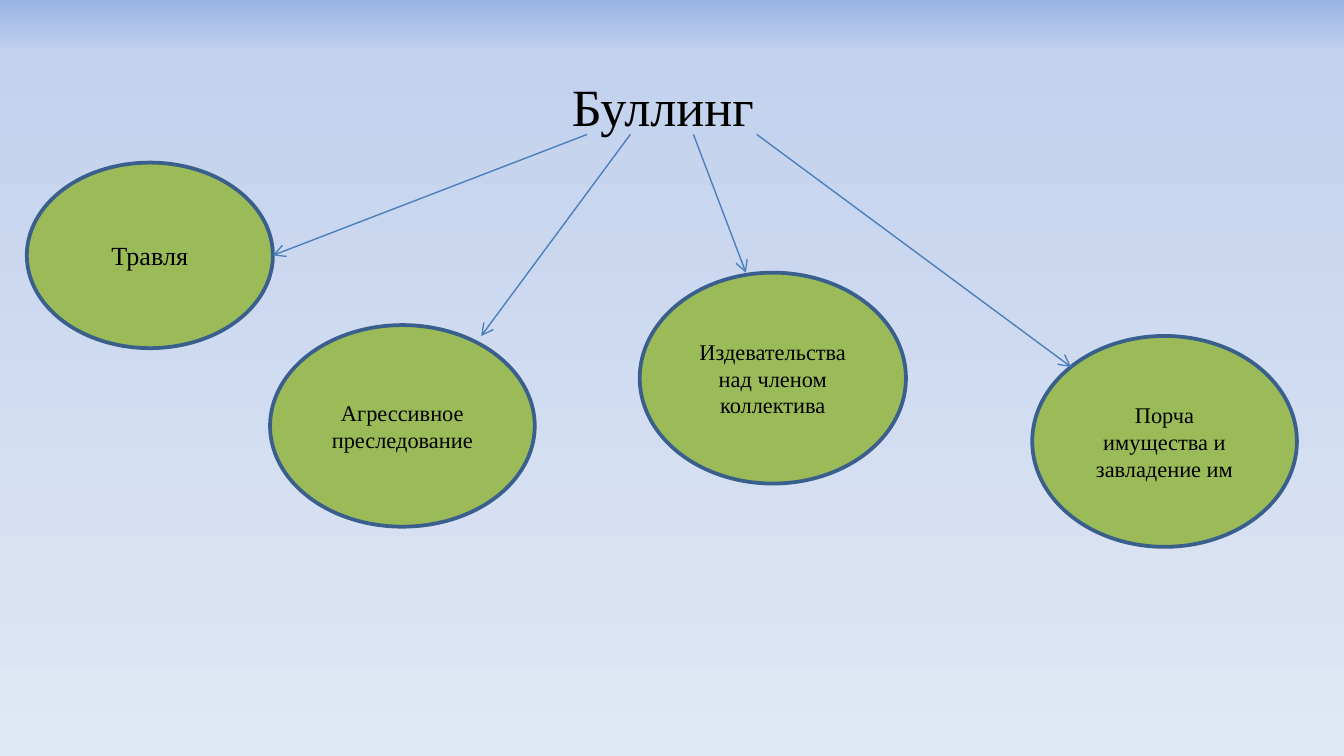
"""Builds a slide that links bullying to its four forms."""
from dataclasses import dataclass

from pptx import Presentation
from pptx import util as u
from pptx.dml.color import RGBColor
from pptx.enum import shapes, text
from pptx.oxml import parse_xml
from pptx.oxml.ns import nsdecls
from pptx.oxml.xmlchemy import OxmlElement


@dataclass(frozen=True)
class Theme:
    """Colours, fonts and sizes of the slide."""
    ink: str = "000000"
    oval: str = "9BBB59"
    outline: str = "3A5F8C"
    arrow: str = "4B7EBC"
    sky: tuple = ((0, "9AB5E4"), (7, "C2D1ED"), (100, "E1E8F5"))
    font: str = "Times New Roman"
    spacer_font: str = "Calibri"
    heading: int = 28
    spacer: int = 44
    large: int = 14
    body: int = 12


THEME = Theme()

FORMS = [
    ("Травля", THEME.large, (14.4, 87.1, 131.8, 99.4)),
    ("Агрессивное преследование", THEME.body, (144.7, 174.2, 141.8, 108)),
    ("Издевательства над членом коллектива", THEME.body, (342.7, 146.1, 142.6, 113)),
    ("Порча имущества и завладение им", THEME.body, (553, 180, 141.8, 113)),
]

ARROW_TOP = 72
ARROWS = [
    (314.6, (146.2, 136.8)),
    (337.7, (257.8, 180)),
    (371.5, (399.6, 146.1)),
    (405.4, (573.8, 196.6)),
]


def add_text(paragraph, words, *, size, font=THEME.font, color=THEME.ink):
    """Append a formatted run to a centred paragraph."""
    paragraph.alignment = text.PP_ALIGN.CENTER
    run = paragraph.add_run()
    run.text = words
    run.font.size = u.Pt(size)
    run.font.name = font
    run.font.color.rgb = RGBColor.from_string(color)


def paint_background(slide):
    """Fill the background with the vertical sky gradient."""
    stops = "".join(
        f'<a:gs pos="{percent * 1000}"><a:srgbClr val="{color}"/></a:gs>'
        for percent, color in THEME.sky
    )
    background = parse_xml(
        f'<p:bg {nsdecls("p", "a")}><p:bgPr><a:gradFill rotWithShape="1">'
        f'<a:gsLst>{stops}</a:gsLst><a:lin ang="5400000" scaled="0"/>'
        "</a:gradFill><a:effectLst/></p:bgPr></p:bg>"
    )
    slide.element.cSld.insert(0, background)


def set_title(slide, words):
    """Place the heading and its wide trailing space."""
    title = slide.shapes.title
    title.left, title.top = u.Pt(36), u.Pt(16.5)
    title.width, title.height = u.Pt(648), u.Pt(67.5)
    frame = title.text_frame
    frame.vertical_anchor = text.MSO_ANCHOR.MIDDLE
    heading = frame.paragraphs[0]
    add_text(heading, words, size=THEME.heading)
    add_text(heading, " ", size=THEME.spacer, font=THEME.spacer_font)


def add_form(slide, words, size, box):
    """Draw one form of bullying as a labelled oval."""
    oval = slide.shapes.add_shape(shapes.MSO_SHAPE.OVAL, *map(u.Pt, box))
    oval.shadow.inherit = False
    oval.fill.solid()
    oval.fill.fore_color.rgb = RGBColor.from_string(THEME.oval)
    oval.line.color.rgb = RGBColor.from_string(THEME.outline)
    oval.line.width = u.Pt(2)
    frame = oval.text_frame
    frame.word_wrap = True
    frame.vertical_anchor = text.MSO_ANCHOR.MIDDLE
    add_text(frame.paragraphs[0], words, size=size)


def add_arrow(slide, start_x, target):
    """Draw an open-headed arrow from the heading to a form."""
    arrow = slide.shapes.add_connector(
        shapes.MSO_CONNECTOR.STRAIGHT, *map(u.Pt, (start_x, ARROW_TOP, *target))
    )
    arrow.line.color.rgb = RGBColor.from_string(THEME.arrow)
    arrow.line.width = u.Pt(0.75)
    head = OxmlElement("a:tailEnd")
    head.set("type", "arrow")
    arrow.line._get_or_add_ln().append(head)
    arrow.element.spPr.append(OxmlElement("a:effectLst"))


def main():
    """Build and save the slide."""
    deck = Presentation()
    deck.slide_width, deck.slide_height = u.Pt(720), u.Pt(405)
    slide = deck.slides.add_slide(deck.slide_layouts.get_by_name("Title Only"))
    paint_background(slide)
    set_title(slide, "Буллинг")
    for words, size, box in FORMS:
        add_form(slide, words, size, box)
    for start_x, target in ARROWS:
        add_arrow(slide, start_x, target)
    deck.save("out.pptx")


if __name__ == "__main__":
    main()
